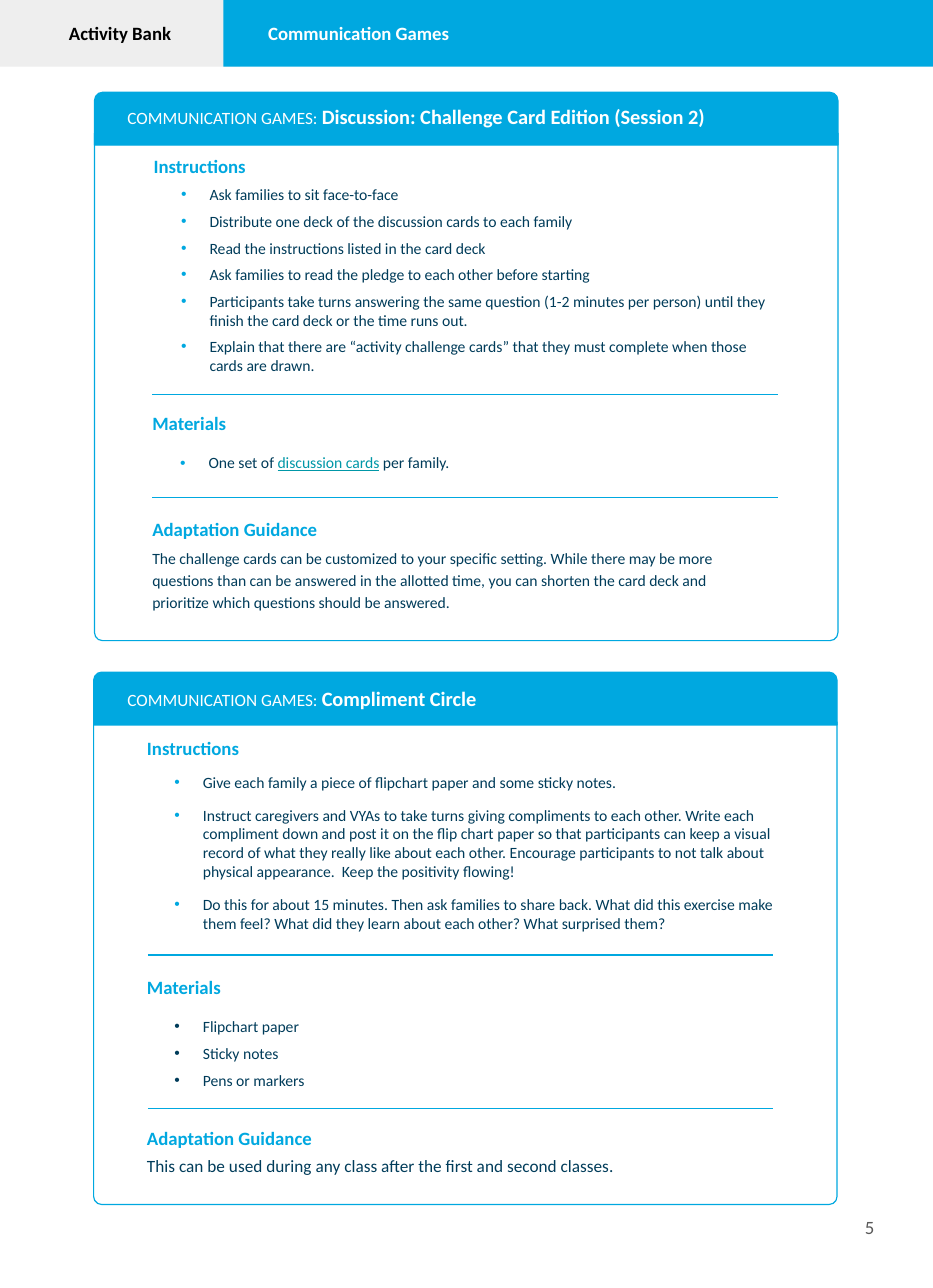
from lxml import etree
from pptx import Presentation
from pptx.dml.color import RGBColor
from pptx.enum.shapes import MSO_CONNECTOR, MSO_SHAPE
from pptx.enum.text import MSO_ANCHOR, PP_ALIGN
from pptx.oxml.ns import qn
from pptx.util import Cm, Pt

RECTANGLE = MSO_SHAPE.RECTANGLE
ROUNDED_PAIR = MSO_SHAPE.ROUND_2_SAME_RECTANGLE
STRAIGHT = MSO_CONNECTOR.STRAIGHT
LEFT, CENTER, RIGHT = PP_ALIGN.LEFT, PP_ALIGN.CENTER, PP_ALIGN.RIGHT
TOP, MIDDLE = MSO_ANCHOR.TOP, MSO_ANCHOR.MIDDLE

BLUE, NAVY, TEAL = "00A8E0", "003C5A", "0097A7"
WHITE, BLACK, PALE, GREY = "FFFFFF", "000000", "EEEEEE", "595959"
CARD_WIDTH, HEADER_HEIGHT, CORNER = 16.74, 1.19, 0.18
RULE_WIDTH = 14.08
TEXT_MARGIN, BULLET_MARGIN, BULLET_INDENT = 0.03, 0.66, -0.64

# style: size, colour, bold
STYLES = {
    "label": (11, WHITE, False),
    "title": (13, WHITE, True),
    "heading": (12, BLUE, True),
    "body": (10, NAVY, False),
    "large body": (11, NAVY, False),
    "link": (10, TEAL, False),
    "section": (12, BLACK, True),
    "topic": (12, WHITE, True),
    "page": (12, GREY, False),
}

# card: left, header top, body top, body height
CARDS = [(2.13, 2.08, 3.0, 11.43), (2.11, 15.14, 16.26, 10.87)]

# rule: left, top
RULES = [(3.43, 8.89), (3.43, 11.2), (3.33, 21.51), (3.33, 24.97)]

# band: left, width, colour
BANDS = [(0, 5.41, PALE), (5.03, 15.98, BLUE)]

# label: box, style, alignment, anchor, text
PAGE_LABELS = [
    ((0, 0.23, 5.41, 1.45), "section", CENTER, TOP, "Activity Bank"),
    ((5.79, 0.23, 13.49, 1.45), "topic", LEFT, TOP, "Communication Games"),
    ((18.67, 26.54, 1.27, 2.21), "page", RIGHT, MIDDLE, "5"),
]

# title: top, text
TITLES = [
    (2.31, "Discussion: Challenge Card Edition (Session 2)"),
    (15.42, "Compliment Circle"),
]

# heading: left, top, text
HEADINGS = [
    (3.43, 3.48, "Instructions"),
    (3.4, 9.27, "Materials"),
    (3.4, 11.66, "Adaptation Guidance"),
    (3.28, 16.59, "Instructions"),
    (3.28, 21.97, "Materials"),
    (3.28, 25.37, "Adaptation Guidance"),
]

# list: left, top, width, height, bullet colour, space before first, space before rest, items
BULLET_LISTS = [
    (4.06, 4.17, 13.36, 4.31, BLUE, 0, 5, [
        "Ask families to sit face-to-face",
        "Distribute one deck of the discussion cards to each family",
        "Read the instructions listed in the card deck",
        "Ask families to read the pledge to each other before starting",
        "Participants take turns answering the same question (1-2 minutes per person) "
        "until they finish the card deck or the time runs out.",
        "Explain that there are “activity challenge cards” that they must complete "
        "when those cards are drawn.",
    ]),
    (4.04, 10.21, 13.49, 0.99, BLUE, 4, 4, [
        [("One set of ", "body"), ("discussion cards", "link"), (" per family.", "body")],
    ]),
    (3.91, 17.4, 13.49, 3.63, BLUE, 9, 9, [
        "Give each family a piece of flipchart paper and some sticky notes.",
        "Instruct caregivers and VYAs to take turns giving compliments to each other. "
        "Write each compliment down and post it on the flip chart paper so that "
        "participants can keep a visual record of what they really like about each other. "
        "Encourage participants to not talk about physical appearance.  "
        "Keep the positivity flowing!",
        "Do this for about 15 minutes. Then ask families to share back. What did this "
        "exercise make them feel? What did they learn about each other? "
        "What surprised them?",
    ]),
    (3.91, 22.91, 13.49, 1.63, NAVY, 0, 5, [
        "Flipchart paper", "Sticky notes", "Pens or markers",
    ]),
]

# guidance: left, top, height, style, line spacing, text
GUIDANCE = [
    (3.4, 12.31, 2.1, "body", 1.15,
     "The challenge cards can be customized to your specific setting. While there may be "
     "more questions than can be answered in the allotted time, you can shorten the card "
     "deck and prioritize which questions should be answered."),
    (3.28, 26.02, 0.6, "large body", 1.0,
     "This can be used during any class after the first and second classes."),
]


def color(value):
    return RGBColor.from_string(value)


def set_font(font, style):
    size, value, bold = STYLES[style]
    font.name, font.size, font.bold = "Calibri", Pt(size), bold
    font.color.rgb = color(value)
    font.underline = style == "link"


def add_block(slide, box, inset=0.0, anchor=TOP):
    frame = slide.shapes.add_textbox(*map(Cm, box)).text_frame
    frame.word_wrap = True
    frame.vertical_anchor = anchor
    frame.margin_left = frame.margin_right = Cm(inset)
    frame.margin_top = frame.margin_bottom = Cm(inset)
    return frame


def write(paragraph, content, style, margin=TEXT_MARGIN, indent=0.0, bullet=None):
    properties = paragraph._p.get_or_add_pPr()
    properties.set("marL", str(Cm(margin)))
    properties.set("indent", str(Cm(indent)))
    if bullet:
        bullet_color = etree.SubElement(properties, qn("a:buClr"))
        etree.SubElement(bullet_color, qn("a:srgbClr"), val=bullet)
        etree.SubElement(properties, qn("a:buFont"), typeface="Arial")
        etree.SubElement(properties, qn("a:buChar"), char="•")
    if isinstance(content, str):
        paragraph.add_run().text = content
        set_font(paragraph.font, style)
        return
    for text, run_style in content:
        run = paragraph.add_run()
        run.text = text
        set_font(run.font, run_style)


def add_panel(slide, kind, box, fill, line=None, corners=()):
    shape = slide.shapes.add_shape(kind, *map(Cm, box))
    shape.shadow.inherit = False
    shape.fill.solid()
    shape.fill.fore_color.rgb = color(fill)
    if line:
        shape.line.color.rgb = color(line)
        shape.line.width = Pt(0.75)
    else:
        shape.line.fill.background()
    for index, radius in enumerate(corners):
        shape.adjustments[index] = radius / min(box[2:])


def add_rule(slide, left, top):
    rule = slide.shapes.add_connector(
        STRAIGHT, Cm(left), Cm(top), Cm(left + RULE_WIDTH), Cm(top))
    rule.line.color.rgb = color(BLUE)
    rule.line.width = Pt(0.75)
    etree.SubElement(rule._element.spPr, qn("a:effectLst"))


def main():
    """Build the activity page with two game cards."""
    presentation = Presentation()
    presentation.slide_width, presentation.slide_height = Cm(21.01), Cm(29.01)
    slide = presentation.slides.add_slide(presentation.slide_layouts[6])

    for left, header_top, body_top, body_height in CARDS:
        add_panel(slide, ROUNDED_PAIR, (left, body_top, CARD_WIDTH, body_height),
                  WHITE, BLUE, (0, CORNER))
        add_panel(slide, ROUNDED_PAIR, (left, header_top, CARD_WIDTH, HEADER_HEIGHT),
                  BLUE, BLUE, (CORNER, 0))
    for left, width, fill in BANDS:
        add_panel(slide, RECTANGLE, (left, 0, width, 1.5), fill)
    for left, top in RULES:
        add_rule(slide, left, top)

    for box, style, alignment, anchor, text in PAGE_LABELS:
        paragraph = add_block(slide, box, 0.25, anchor).paragraphs[0]
        paragraph.alignment = alignment
        write(paragraph, text, style, 0)
    for top, title in TITLES:
        frame = add_block(slide, (2.84, top + 0.03, 15.21, 0.6))
        write(frame.paragraphs[0],
              [("COMMUNICATION GAMES: ", "label"), (title, "title")], "label")
    for left, top, text in HEADINGS:
        frame = add_block(slide, (left, top, 13.26, 0.52))
        write(frame.paragraphs[0], text, "heading")
    for left, top, width, height, bullet, first, rest, items in BULLET_LISTS:
        frame = add_block(slide, (left, top, width, height))
        for index, item in enumerate(items):
            paragraph = frame.add_paragraph() if index else frame.paragraphs[0]
            write(paragraph, item, "body", BULLET_MARGIN, BULLET_INDENT, bullet)
            paragraph.space_before = Pt(rest if index else first)
    for left, top, height, style, spacing, text in GUIDANCE:
        paragraph = add_block(slide, (left, top, 13.56, height)).paragraphs[0]
        write(paragraph, text, style)
        paragraph.line_spacing = spacing

    presentation.save("out.pptx")


if __name__ == "__main__":
    main()
